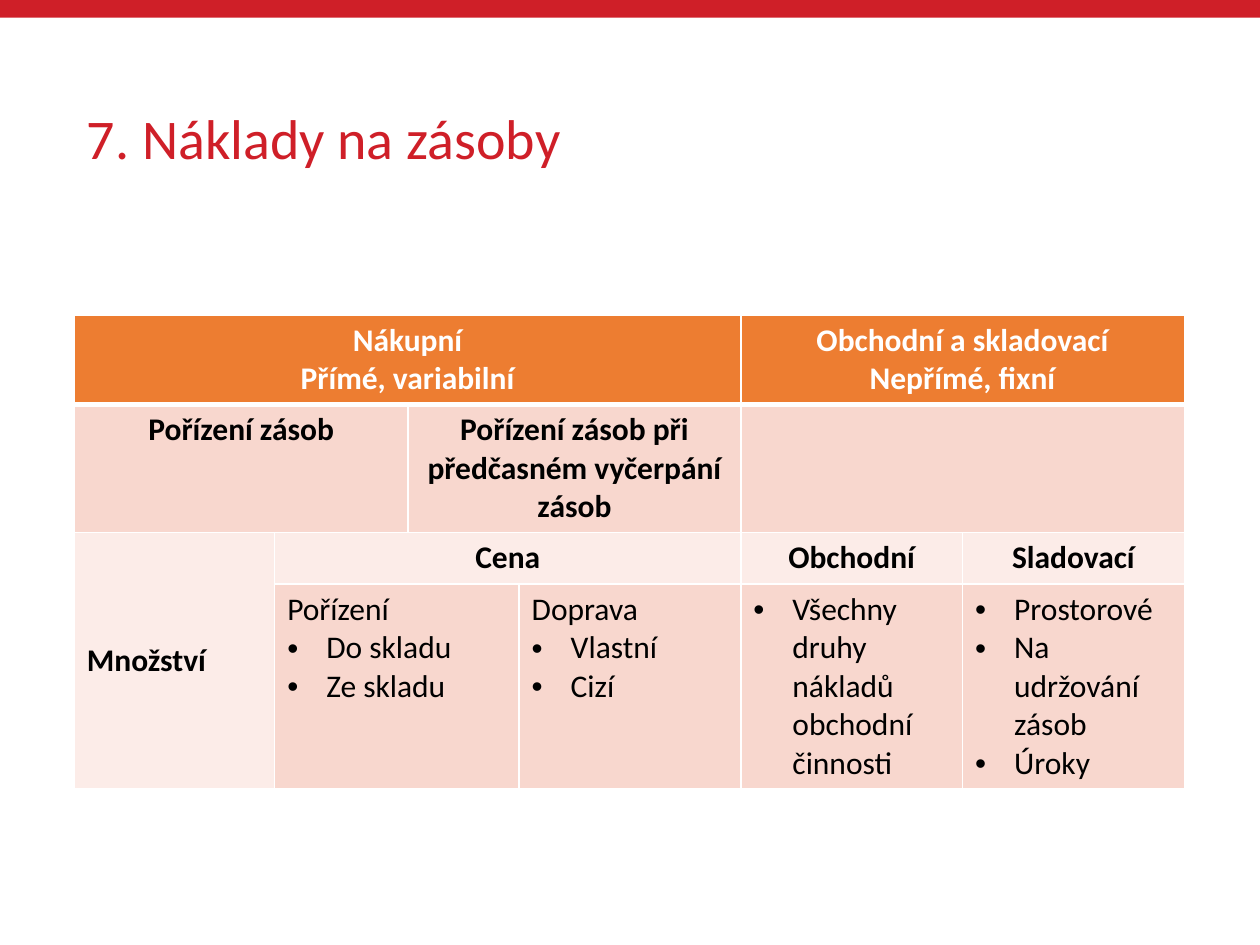
import pptx
import pptx.dml.color
import pptx.enum.shapes
import pptx.enum.text
import pptx.oxml
import pptx.oxml.ns
import pptx.util
from pptx.util import Inches

COLORS = {
    "red": "CF1F28",
    "orange": "ED7D31",
    "salmon": "F8D7CE",
    "blush": "FCECE8",
    "white": "FFFFFF",
    "black": "000000",
}
FONT = "Calibri"
COLUMN_WIDTHS = [1.59, 1.06, 0.88, 1.76, 1.76, 1.76]
ROW_HEIGHT = 0.41
BULLET = "• "

# row, column, row span, column span, fill, style, lines
CELLS = [
    (0, 0, 1, 4, "orange", "heading", ["Nákupní", "Přímé, variabilní"]),
    (0, 4, 1, 2, "orange", "heading", ["Obchodní a skladovací", "Nepřímé, fixní"]),
    (1, 0, 1, 2, "salmon", "heading", ["Pořízení zásob"]),
    (1, 2, 1, 2, "salmon", "heading", ["Pořízení zásob při předčasném vyčerpání zásob"]),
    (1, 4, 1, 2, "salmon", "heading", []),
    (2, 0, 2, 1, "blush", "side", ["Množství"]),
    (2, 1, 1, 3, "blush", "heading", ["Cena"]),
    (2, 4, 1, 1, "blush", "heading", ["Obchodní"]),
    (2, 5, 1, 1, "blush", "heading", ["Sladovací"]),
    (3, 1, 1, 2, "salmon", "list", ["Pořízení", "• Do skladu", "• Ze skladu"]),
    (3, 3, 1, 1, "salmon", "list", ["Doprava", "• Vlastní", "• Cizí"]),
    (3, 4, 1, 1, "salmon", "list", ["• Všechny druhy nákladů obchodní činnosti"]),
    (3, 5, 1, 1, "salmon", "list", ["• Prostorové", "• Na udržování zásob", "• Úroky"]),
]


def color(name):
    return pptx.dml.color.RGBColor.from_string(COLORS[name])


def add_text(paragraph, text, size, color_name, bold=False):
    run = paragraph.add_run()
    run.text = text
    run.font.name = FONT
    run.font.size = pptx.util.Pt(size)
    run.font.bold = bold
    run.font.color.rgb = color(color_name)


def add_bullet(paragraph):
    properties = paragraph._p.get_or_add_pPr()
    properties.set("marL", str(Inches(0.31)))
    properties.set("indent", str(-Inches(0.31)))
    namespace = pptx.oxml.ns.nsdecls("a")
    for xml in (f'<a:buFont {namespace} typeface="Arial"/>',
                f'<a:buChar {namespace} char="•"/>'):
        properties.append(pptx.oxml.parse_xml(xml))


def set_borders(cell, widths):
    properties = cell._tc.get_or_add_tcPr()
    for side, width in widths.items():
        properties.append(pptx.oxml.parse_xml(
            f'<a:ln{side} {pptx.oxml.ns.nsdecls("a")} w="{pptx.util.Pt(width)}">'
            f'<a:solidFill><a:srgbClr val="{COLORS["white"]}"/></a:solidFill></a:ln{side}>'))


def add_top_bar(slide, left, top, width, height):
    shape = slide.shapes.add_shape(
        pptx.enum.shapes.MSO_SHAPE.RECTANGLE, left, top, width, height)
    shape.shadow.inherit = False
    shape.fill.solid()
    shape.fill.fore_color.rgb = color("red")
    shape.line.fill.background()


def place_title(slide, left, top, width, height):
    title = slide.shapes.title
    title.left, title.top, title.width, title.height = left, top, width, height
    title.text_frame.vertical_anchor = pptx.enum.text.MSO_ANCHOR.MIDDLE
    paragraph = title.text_frame.paragraphs[0]
    paragraph.alignment = pptx.enum.text.PP_ALIGN.LEFT
    paragraph.line_spacing = 0.9
    add_text(paragraph, "7. Náklady na zásoby", 32, "red")


def fill_cell(cell, style, lines, text_color):
    if style == "side":
        cell.vertical_anchor = pptx.enum.text.MSO_ANCHOR.MIDDLE
    text_frame = cell.text_frame
    for index, line in enumerate(lines):
        paragraph = text_frame.add_paragraph() if index else text_frame.paragraphs[0]
        if style == "heading":
            paragraph.alignment = pptx.enum.text.PP_ALIGN.CENTER
        if line.startswith(BULLET):
            add_bullet(paragraph)
        add_text(paragraph, line.removeprefix(BULLET), 18, text_color, style != "list")


def add_cost_table(slide, left, top, width, height):
    frame = slide.shapes.add_table(4, len(COLUMN_WIDTHS), left, top, width, height)
    table = frame.table
    for column, column_width in zip(table.columns, COLUMN_WIDTHS):
        column.width = Inches(column_width)
    for row in table.rows:
        row.height = Inches(ROW_HEIGHT)
    frame.height = height

    for row, column, row_span, column_span, fill, style, lines in CELLS:
        cell = table.cell(row, column)
        if row_span * column_span > 1:
            cell.merge(table.cell(row + row_span - 1, column + column_span - 1))
        for covered_row in range(row, row + row_span):
            for covered_column in range(column, column + column_span):
                covered = table.cell(covered_row, covered_column)
                set_borders(covered, {"L": 1, "R": 1,
                                      "T": 3 if covered_row == 1 else 1,
                                      "B": 3 if covered_row == 0 else 1})
                covered.fill.solid()
                covered.fill.fore_color.rgb = color(fill)
        fill_cell(cell, style, lines, "white" if row == 0 else "black")


def main():
    presentation = pptx.Presentation()
    presentation.slide_width = Inches(10)
    presentation.slide_height = Inches(7.5)
    slide = presentation.slides.add_slide(presentation.slide_layouts[5])
    add_top_bar(slide, 0, 0, presentation.slide_width, Inches(0.14))
    place_title(slide, Inches(0.59), Inches(0.4), Inches(8.82), Inches(1.45))
    add_cost_table(slide, Inches(0.59), Inches(2.5), Inches(8.82), Inches(2.51))
    presentation.save("out.pptx")


if __name__ == "__main__":
    main()
